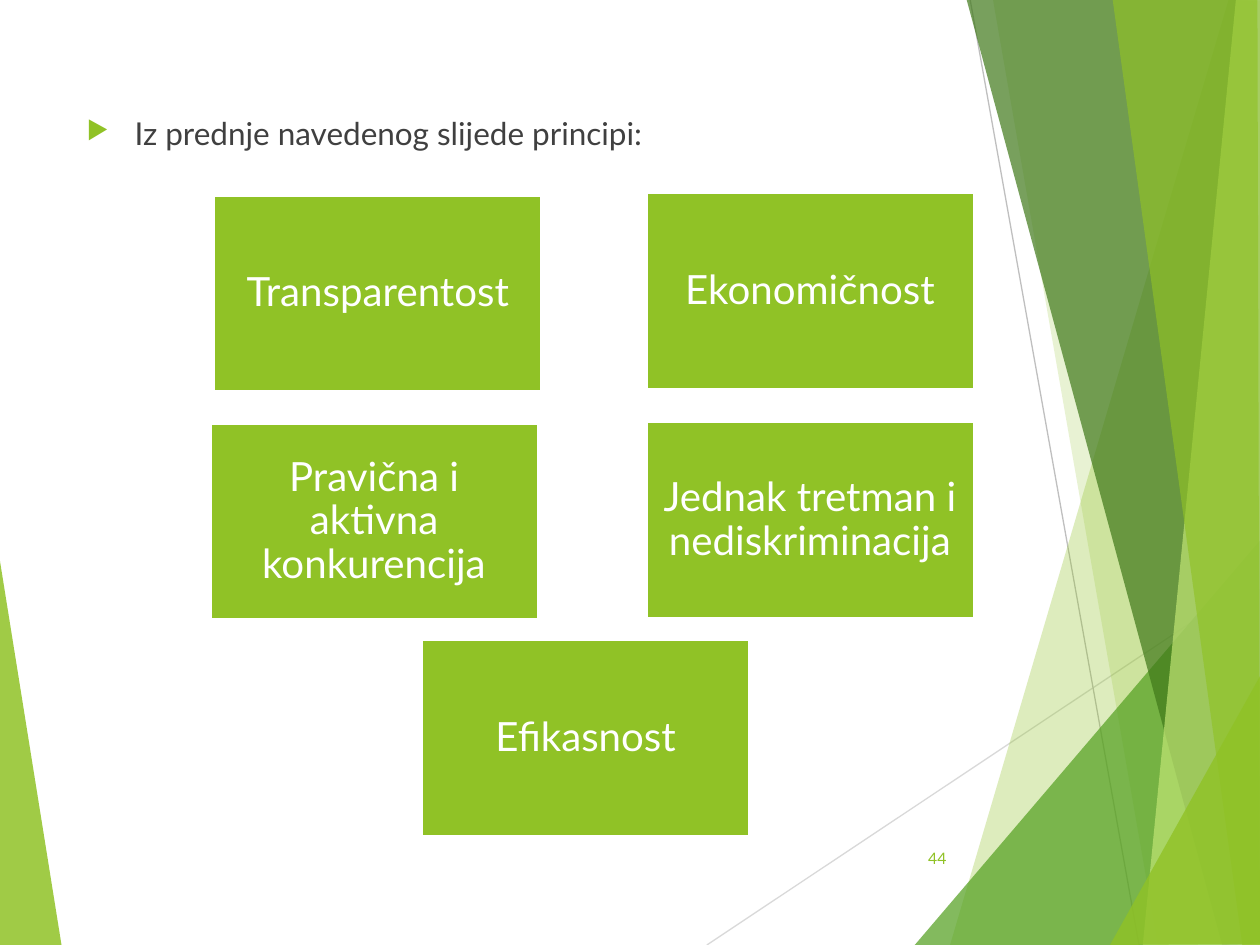
from dataclasses import dataclass

from lxml import etree
from pptx import Presentation
from pptx.dml.color import RGBColor
from pptx.enum.shapes import MSO_CONNECTOR, MSO_SHAPE
from pptx.enum.text import MSO_ANCHOR, PP_ALIGN
from pptx.oxml.ns import qn
from pptx.util import Inches, Pt

STRAIGHT = MSO_CONNECTOR.STRAIGHT
RECTANGLE = MSO_SHAPE.RECTANGLE
MIDDLE = MSO_ANCHOR.MIDDLE
CENTER, RIGHT = PP_ALIGN.CENTER, PP_ALIGN.RIGHT


@dataclass(frozen=True)
class Theme:
    font: str = "Lato"
    lime: str = "90C226"
    green: str = "54A021"
    forest: str = "3F7819"
    pale: str = "C0E474"
    white: str = "FFFFFF"
    ink: str = "404040"
    light_gray: str = "D9D9D9"
    gray: str = "BFBFBF"
    body_size: int = 18
    box_size: int = 23
    number_size: int = 9


theme = Theme()


def style_text(paragraph, size, color):
    paragraph.font.name = theme.font
    paragraph.font.size = Pt(size)
    paragraph.font.color.rgb = RGBColor.from_string(color)


def add_facet(slide, points, color, opacity):
    corners = [(Inches(x), Inches(y)) for x, y in points]
    builder = slide.shapes.build_freeform(*corners[0])
    builder.add_line_segments(corners[1:], close=True)
    facet = builder.convert_to_shape()
    facet.shadow.inherit = False
    facet.line.fill.background()
    facet.fill.solid()
    facet.fill.fore_color.rgb = RGBColor.from_string(color)
    color_element = facet.fill._xPr.find(qn("a:solidFill"))[0]
    etree.SubElement(color_element, qn("a:alpha"), val=str(opacity * 1000))


presentation = Presentation()
presentation.slide_width = Inches(10)
presentation.slide_height = Inches(7.5)
slide = presentation.slides.add_slide(presentation.slide_layouts[6])

add_facet(slide, [(-0.01, 4.39), (0.49, 7.51), (-0.01, 7.5)], theme.lime, 85)

for x1, y1, x2, y2, color in [
    (5.61, 7.5, 10.01, 4.57, theme.light_gray),
    (7.7, 0, 9.04, 7.5, theme.gray),
]:
    ray = slide.shapes.add_connector(STRAIGHT, Inches(x1), Inches(y1), Inches(x2), Inches(y2))
    ray.line.color.rgb = RGBColor.from_string(color)
    ray.line.width = Pt(0.75)
    etree.SubElement(ray._element.spPr, qn("a:effectLst"))

facets = [
    ([(9.75, 0), (7.54, 7.5), (10.02, 7.51), (10.01, 0.01)], theme.lime, 30),
    ([(7.88, -0.01), (9.19, 7.5), (10.01, 7.5), (10.01, -0.01)], theme.lime, 20),
    ([(7.26, 7.5), (10, 4.29), (10.01, 7.5)], theme.green, 72),
    ([(7.67, -0.01), (9.7, 7.5), (10.01, 7.49), (10.01, -0.01)], theme.forest, 70),
    ([(9.81, -0.01), (9.07, 7.5), (10.01, 7.5), (10, -0.01)], theme.pale, 70),
    ([(8.83, -0.01), (9.86, 7.5), (10, 7.5), (9.98, -0.01)], theme.lime, 65),
    ([(8.81, 7.5), (10.01, 5.35), (10.01, 7.49)], theme.lime, 80),
]
for points, color, opacity in facets:
    add_facet(slide, points, color, opacity)

body = slide.shapes.add_textbox(Inches(0.59), Inches(0.86), Inches(7.64), Inches(6.14))
body.text_frame.word_wrap = True
paragraph = body.text_frame.paragraphs[0]
paragraph.text = "Iz prednje navedenog slijede principi:"
paragraph.space_before = Pt(10)
properties = paragraph._p.get_or_add_pPr()
properties.set("marL", str(Inches(0.38)))
properties.set("indent", str(Inches(-0.38)))
bullet_color = etree.SubElement(properties, qn("a:buClr"))
etree.SubElement(bullet_color, qn("a:srgbClr"), val=theme.lime)
etree.SubElement(properties, qn("a:buSzPct"), val="80000")
etree.SubElement(properties, qn("a:buChar"), char="▶")
style_text(paragraph, theme.body_size, theme.ink)

page_number = slide.shapes.add_textbox(Inches(7.05), Inches(6.61), Inches(0.56), Inches(0.4))
page_number.text_frame.word_wrap = True
page_number.text_frame.vertical_anchor = MIDDLE
paragraph = page_number.text_frame.paragraphs[0]
paragraph.text = "44"
paragraph.alignment = RIGHT
style_text(paragraph, theme.number_size, theme.lime)

principles = [
    (1.7, 1.55, "Transparentost"),
    (5.13, 1.53, "Ekonomičnost"),
    (1.67, 3.36, "Pravična i aktivna konkurencija"),
    (5.13, 3.35, "Jednak tretman i nediskriminacija"),
    (3.35, 5.08, "Efikasnost"),
]
for left, top, label in principles:
    box = slide.shapes.add_shape(RECTANGLE, Inches(left), Inches(top), Inches(2.6), Inches(1.56))
    box.shadow.inherit = False
    box.fill.solid()
    box.fill.fore_color.rgb = RGBColor.from_string(theme.lime)
    box.line.color.rgb = RGBColor.from_string(theme.white)
    box.line.width = Pt(1.5)
    frame = box.text_frame
    frame.word_wrap = True
    frame.vertical_anchor = MIDDLE
    frame.margin_left = frame.margin_right = Inches(0.1)
    frame.margin_top = frame.margin_bottom = Inches(0.1)
    paragraph = frame.paragraphs[0]
    paragraph.text = label
    paragraph.alignment = CENTER
    paragraph.line_spacing = 0.9
    style_text(paragraph, theme.box_size, theme.white)

presentation.save("out.pptx")
